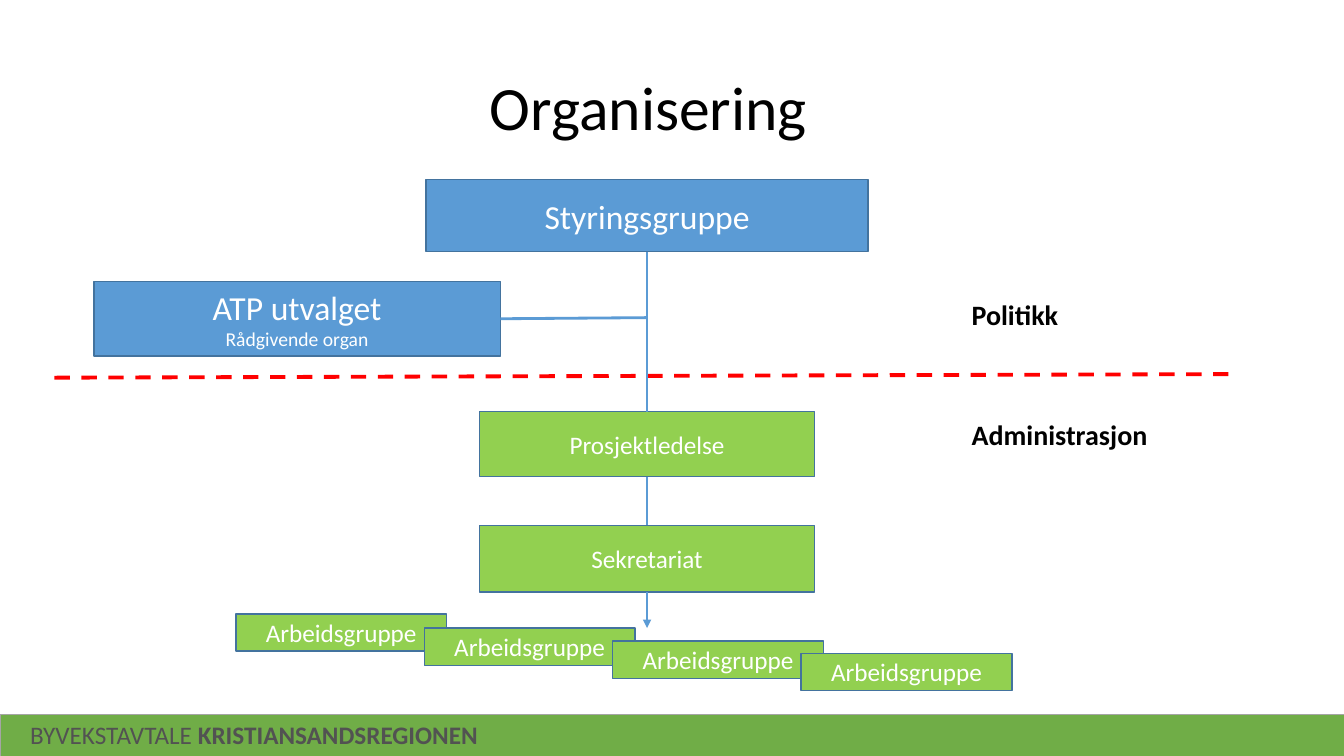
from dataclasses import dataclass

from lxml.etree import SubElement
from pptx import Presentation
from pptx.dml.color import RGBColor
from pptx.enum.dml import MSO_LINE
from pptx.enum.shapes import MSO_CONNECTOR, MSO_SHAPE
from pptx.enum.text import MSO_ANCHOR, MSO_AUTO_SIZE, PP_ALIGN
from pptx.oxml.ns import qn
from pptx.util import Pt

BLACK = RGBColor(0x00, 0x00, 0x00)
WHITE = RGBColor(0xFF, 0xFF, 0xFF)
RED = RGBColor(0xFF, 0x00, 0x00)
BLUE = RGBColor(0x5B, 0x9B, 0xD5)
DARK_BLUE = RGBColor(0x43, 0x73, 0x9E)
LIME = RGBColor(0x92, 0xD0, 0x50)
GREEN = RGBColor(0x70, 0xAD, 0x47)
GREY = RGBColor(0xA5, 0xA5, 0xA5)
DARK_GREY = RGBColor(0x52, 0x52, 0x52)
FONT = "Calibri"
AXIS = 462.2


@dataclass
class Area:
    left: float
    top: float
    width: float
    height: float

    def lengths(self) -> tuple:
        return Pt(self.left), Pt(self.top), Pt(self.width), Pt(self.height)


@dataclass
class Unit:
    area: Area
    fill: RGBColor
    lines: list[tuple[str, float]]


@dataclass
class Link:
    start: tuple[float, float]
    end: tuple[float, float]
    color: RGBColor = BLUE
    weight: float = 2
    dashed: bool = False
    arrow: bool = False


def add_text(para, text: str, *, size: float, color: RGBColor, bold: bool = False) -> None:
    span = para.add_run()
    span.text = text
    span.font.name = FONT
    span.font.size = Pt(size)
    span.font.color.rgb = color
    span.font.bold = bold


def add_rectangle(page, area: Area, fill: RGBColor, outline: RGBColor, weight: float):
    box = page.shapes.add_shape(MSO_SHAPE.RECTANGLE, *area.lengths())
    box.shadow.inherit = False
    box.fill.solid()
    box.fill.fore_color.rgb = fill
    box.line.color.rgb = outline
    box.line.width = Pt(weight)
    return box


def add_unit(page, unit: Unit) -> None:
    frame = add_rectangle(page, unit.area, unit.fill, DARK_BLUE, 1).text_frame
    frame.word_wrap = True
    frame.vertical_anchor = MSO_ANCHOR.MIDDLE
    for index, (text, size) in enumerate(unit.lines):
        para = frame.add_paragraph() if index else frame.paragraphs[0]
        para.alignment = PP_ALIGN.CENTER
        add_text(para, text, size=size, color=WHITE)


def add_label(page, area: Area):
    frame = page.shapes.add_textbox(*area.lengths()).text_frame
    frame.word_wrap = True
    frame.auto_size = MSO_AUTO_SIZE.SHAPE_TO_FIT_TEXT
    return frame.paragraphs[0]


def add_link(page, link: Link) -> None:
    ends = [Pt(value) for value in (*link.start, *link.end)]
    connector = page.shapes.add_connector(MSO_CONNECTOR.STRAIGHT, *ends)
    connector.line.color.rgb = link.color
    connector.line.width = Pt(link.weight)
    if link.dashed:
        connector.line.dash_style = MSO_LINE.DASH
    properties = connector._element.spPr
    if link.arrow:
        SubElement(properties.find(qn("a:ln")), qn("a:tailEnd"), type="triangle")
    SubElement(properties, qn("a:effectLst"))


def add_title(page, text: str) -> None:
    title = page.shapes.title
    title.left, title.top, title.width, title.height = Area(342.7, 26.6, 275, 104.4).lengths()
    frame = title.text_frame
    frame.word_wrap = True
    frame.auto_size = MSO_AUTO_SIZE.NONE
    frame.vertical_anchor = MSO_ANCHOR.MIDDLE
    para = frame.paragraphs[0]
    para.alignment = PP_ALIGN.LEFT
    para.line_spacing = 0.9
    add_text(para, text, size=44, color=BLACK)


def add_footer(page) -> None:
    add_rectangle(page, Area(0, 510.3, 960, 30), GREEN, GREY, 0.5)
    para = add_label(page, Area(14.4, 510.3, 686, 29))
    add_text(para, "BYVEKSTAVTALE ", size=18, color=DARK_GREY)
    add_text(para, "KRISTIANSANDSREGIONEN", size=18, color=DARK_GREY, bold=True)


UNITS = [
    Unit(Area(304.4, 128.3, 315.6, 51.5), BLUE, [("Styringsgruppe", 24)]),
    Unit(Area(67, 201, 290.4, 53.4), BLUE, [("ATP utvalget", 24), ("Rådgivende organ", 14)]),
    Unit(Area(342.7, 294, 239, 46.5), LIME, [("Prosjektledelse", 18)]),
    Unit(Area(342.7, 375.3, 239, 47.5), LIME, [("Sekretariat", 18)]),
] + [
    Unit(Area(168.5 + 134.6 * index, top, 150.5, 26.6), LIME, [("Arbeidsgruppe", 18)])
    for index, top in enumerate((438.6, 448.6, 458, 466.6))
]

LABELS = [
    ("Politikk", Area(686.9, 209, 198, 31.5)),
    ("Administrasjon", Area(686.9, 294.7, 147.6, 31.5)),
]

LINKS = [
    Link((38.9, 269.8), (884.9, 267.2), RED, 2.75, dashed=True),
    Link((AXIS, 179.8), (AXIS, 294)),
    Link((AXIS, 340.5), (AXIS, 375.3)),
    Link((AXIS, 422.8), (AXIS, 448.6), arrow=True),
    Link((357.4, 227.7), (AXIS, 226.9)),
]


def main() -> None:
    deck = Presentation()
    deck.slide_width, deck.slide_height = Pt(960), Pt(540)
    page = deck.slides.add_slide(deck.slide_layouts[5])
    add_title(page, "Organisering")
    add_footer(page)
    for unit in UNITS:
        add_unit(page, unit)
    for text, area in LABELS:
        add_text(add_label(page, area), text, size=20, color=BLACK, bold=True)
    for link in LINKS:
        add_link(page, link)
    deck.save("out.pptx")


if __name__ == "__main__":
    main()
